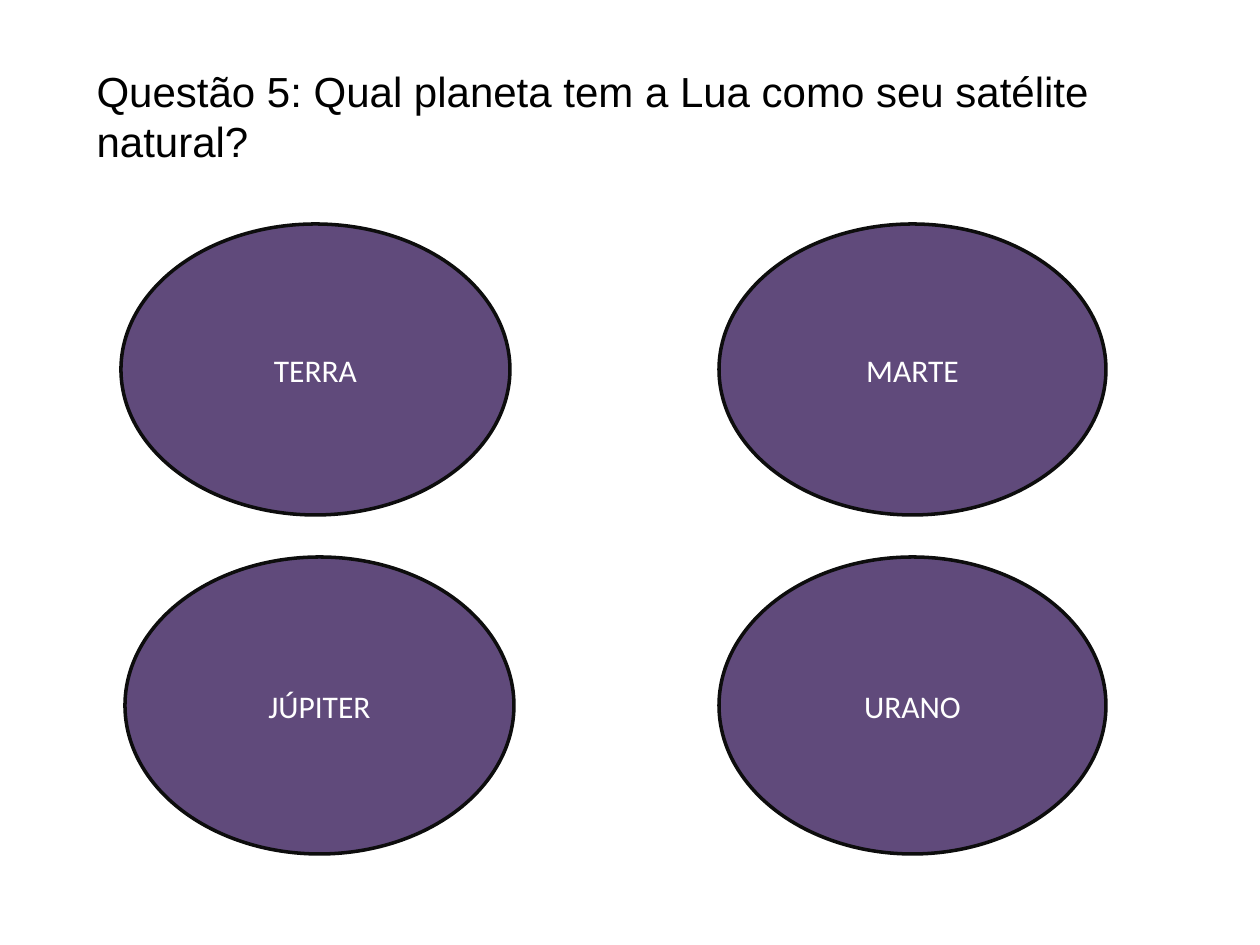
from pptx import Presentation
from pptx.dml.color import RGBColor
from pptx.enum.shapes import MSO_SHAPE as Shape
from pptx.enum.text import MSO_ANCHOR as Anchor, MSO_AUTO_SIZE as AutoSize, PP_ALIGN as Align
from pptx.util import Emu, Pt

PX_PER_INCH = 126
TITLE_ONLY = 5

# Planet, left, top, width, height
ANSWERS = [
    ("TERRA", 121, 224, 389, 291),
    ("MARTE", 719, 224, 387, 291),
    ("JÚPITER", 125, 557, 389, 297),
    ("URANO", 719, 557, 387, 297),
]


def px(length):
    return Emu(round(length * 914400 / PX_PER_INCH))


def color(code):
    return RGBColor.from_string(code)


def write(frame, text, font, size, code, align, anchor):
    frame.word_wrap = True
    frame.vertical_anchor = anchor
    para = frame.paragraphs[0]
    para.alignment = align
    span = para.add_run()
    span.text = text
    span.font.name = font
    span.font.size = Pt(size)
    span.font.color.rgb = color(code)


def set_question(page, text, left, top, width, height):
    title = page.shapes.title
    title.left, title.top = px(left), px(top)
    title.width, title.height = px(width), px(height)
    write(title.text_frame, text, "Arial", 24, "000000", Align.LEFT, Anchor.TOP)
    title.text_frame.auto_size = AutoSize.SHAPE_TO_FIT_TEXT


def add_answer(page, planet, left, top, width, height):
    oval = page.shapes.add_shape(Shape.OVAL, px(left), px(top), px(width), px(height))
    oval.shadow.inherit = False
    oval.fill.solid()
    oval.fill.fore_color.rgb = color("604A7B")
    oval.line.color.rgb = color("0D0D0D")
    oval.line.width = Pt(2)
    write(oval.text_frame, planet, "Calibri", 18, "FFFFFF", Align.CENTER, Anchor.MIDDLE)


def main():
    deck = Presentation()
    deck.slide_width, deck.slide_height = px(1260), px(945)
    page = deck.slides.add_slide(deck.slide_layouts[TITLE_ONLY])
    page.background.fill.solid()
    page.background.fill.fore_color.rgb = color("FFFFFF")

    # Question
    set_question(page, "Questão 5: Qual planeta tem a Lua como seu satélite natural?",
                 84, 59, 1081, 115)

    # Answer choices
    for answer in ANSWERS:
        add_answer(page, *answer)

    deck.save("out.pptx")


if __name__ == "__main__":
    main()
